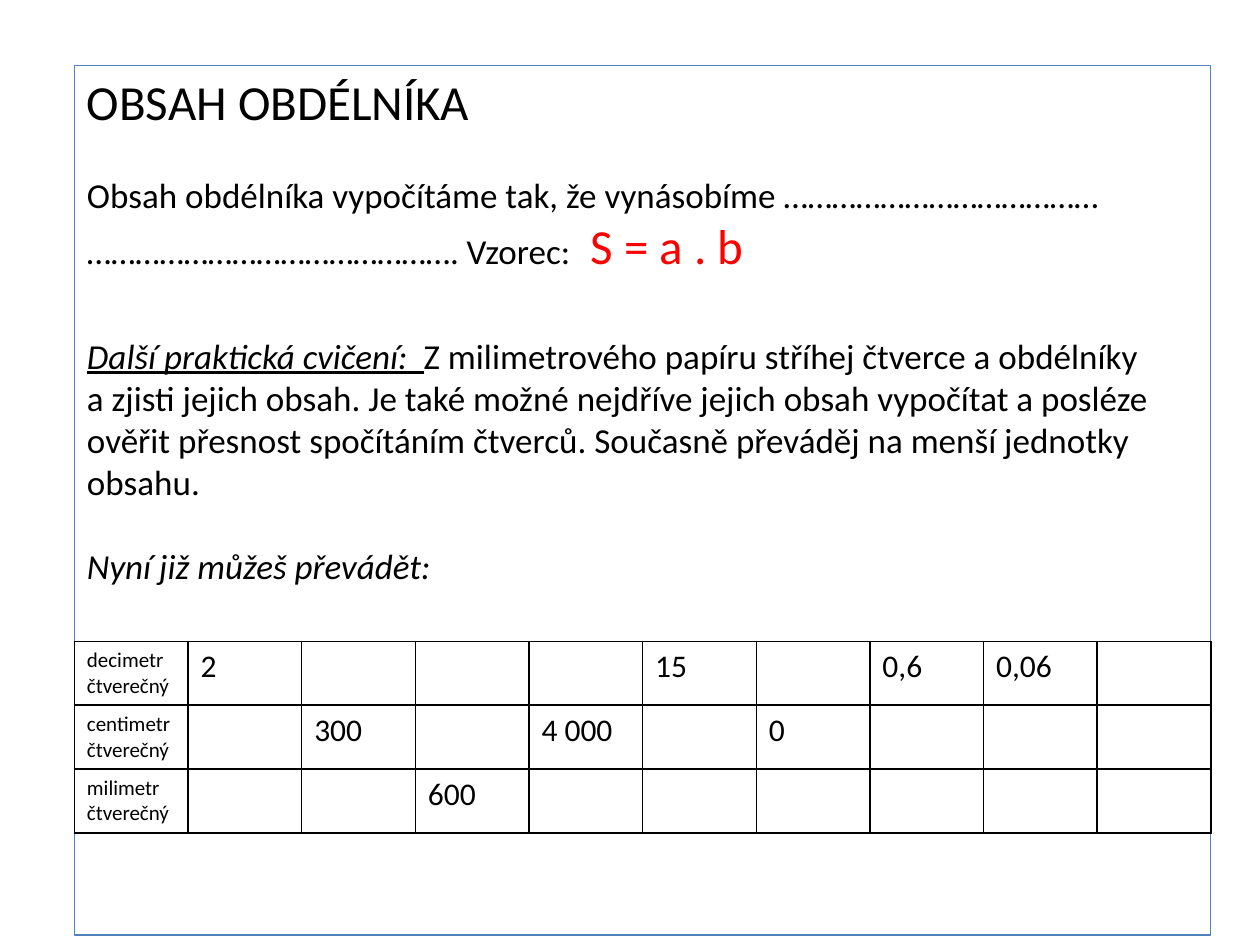
from lxml import etree
from pptx import Presentation, util as u
from pptx.dml.color import RGBColor
from pptx.enum import text
from pptx.oxml.ns import qn

COLORS = {"ink": "000000", "formula": "FF0000", "frame": "4F81BD"}
FONT = "Calibri"
LEFT, TOP, WIDTH, HEIGHT = 0.59, 0.52, 9.02, 6.9
TABLE_TOP, ROW_HEIGHT = 5.09, 0.5
HEADING_HEIGHT = 0.6
BODY_INSET = 0.86  # room for the heading inside the frame
FORMULA_TAB = 4.03

# Each line: space before in points, then its runs as (wording, format)
LINES = [
    (0, [("Obsah obdélníka vypočítáme tak, že vynásobíme …………………………………", {})]),
    (0, [("………………………………………. Vzorec:\t", {}),
         ("S = a . b", {"size": 28, "color": "formula"})]),
    (34, [("Další praktická cvičení:  ", {"italic": True, "underline": True}),
          ("Z milimetrového papíru stříhej čtverce a obdélníky", {})]),
    (0, [("a zjisti jejich obsah. Je také možné nejdříve jejich obsah vypočítat a posléze", {})]),
    (0, [("ověřit přesnost spočítáním čtverců. Současně převáděj na menší jednotky", {})]),
    (0, [("obsahu.", {})]),
    (24.4, [("Nyní již můžeš převádět:", {"italic": True})]),
]
FORMULA_LINE = 1

# Each unit with its given values by column
UNITS = [
    ("decimetr", {1: "2", 5: "15", 7: "0,6", 8: "0,06"}),
    ("centimetr", {2: "300", 4: "4 000", 6: "0"}),
    ("milimetr", {3: "600"}),
]
COLUMNS = 10


def add_run(paragraph, wording, size=20, color="ink", italic=False, underline=False):
    run = paragraph.add_run()
    run.text = wording
    font = run.font
    font.name, font.size = FONT, u.Pt(size)
    font.italic, font.underline = italic, underline
    font.color.rgb = RGBColor.from_string(COLORS[color])


def place(placeholder, height, top_inset):
    placeholder.left, placeholder.top = u.Inches(LEFT), u.Inches(TOP)
    placeholder.width, placeholder.height = u.Inches(WIDTH), u.Inches(height)
    frame = placeholder.text_frame
    frame.word_wrap = True
    frame.auto_size = text.MSO_AUTO_SIZE.NONE
    frame.vertical_anchor = text.MSO_ANCHOR.TOP
    frame.margin_top = u.Inches(top_inset)
    return frame


def add_heading(title):
    paragraph = place(title, HEADING_HEIGHT, 0.05).paragraphs[0]
    paragraph.alignment = text.PP_ALIGN.LEFT
    add_run(paragraph, "OBSAH OBDÉLNÍKA", size=28)


def add_lesson(body):
    frame = place(body, HEIGHT, BODY_INSET)
    body.line.color.rgb = RGBColor.from_string(COLORS["frame"])
    body.line.width = u.Pt(0.75)
    for index, (space_before, runs) in enumerate(LINES):
        paragraph = frame.add_paragraph() if index else frame.paragraphs[0]
        paragraph.space_before = u.Pt(space_before)
        properties = paragraph._p.get_or_add_pPr()
        properties.set("marL", "0")
        properties.set("indent", "0")
        etree.SubElement(properties, qn("a:buNone"))
        if index == FORMULA_LINE:
            tabs = etree.SubElement(properties, qn("a:tabLst"))
            etree.SubElement(tabs, qn("a:tab"), pos=str(u.Inches(FORMULA_TAB)), algn="l")
        for wording, style in runs:
            add_run(paragraph, wording, **style)


def style_cell(cell):
    properties = cell._tc.get_or_add_tcPr()
    for side in ("lnL", "lnR", "lnT", "lnB"):
        border = etree.SubElement(properties, qn(f"a:{side}"), w=str(u.Pt(1)))
        fill = etree.SubElement(border, qn("a:solidFill"))
        etree.SubElement(fill, qn("a:srgbClr"), val=COLORS["ink"])
    cell.fill.background()


def add_conversions(slide):
    table = slide.shapes.add_table(
        len(UNITS), COLUMNS, u.Inches(LEFT), u.Inches(TABLE_TOP),
        u.Inches(WIDTH), u.Inches(ROW_HEIGHT * len(UNITS))).table
    table.first_row = table.horz_banding = False
    for row, (unit, values) in enumerate(UNITS):
        for column in range(COLUMNS):
            cell = table.cell(row, column)
            style_cell(cell)
            paragraph = cell.text_frame.paragraphs[0]
            if column == 0:
                add_run(paragraph, unit, size=12)
                add_run(cell.text_frame.add_paragraph(), "čtverečný", size=12)
            elif column in values:
                add_run(paragraph, values[column], size=18)
            else:
                paragraph.font.size = u.Pt(18)


def main():
    prs = Presentation()
    prs.slide_width, prs.slide_height = u.Inches(10), u.Inches(7.5)
    slide = prs.slides.add_slide(prs.slide_layouts[1])
    add_heading(slide.shapes.title)
    add_lesson(slide.placeholders[1])
    add_conversions(slide)
    prs.save("out.pptx")


if __name__ == "__main__":
    main()
